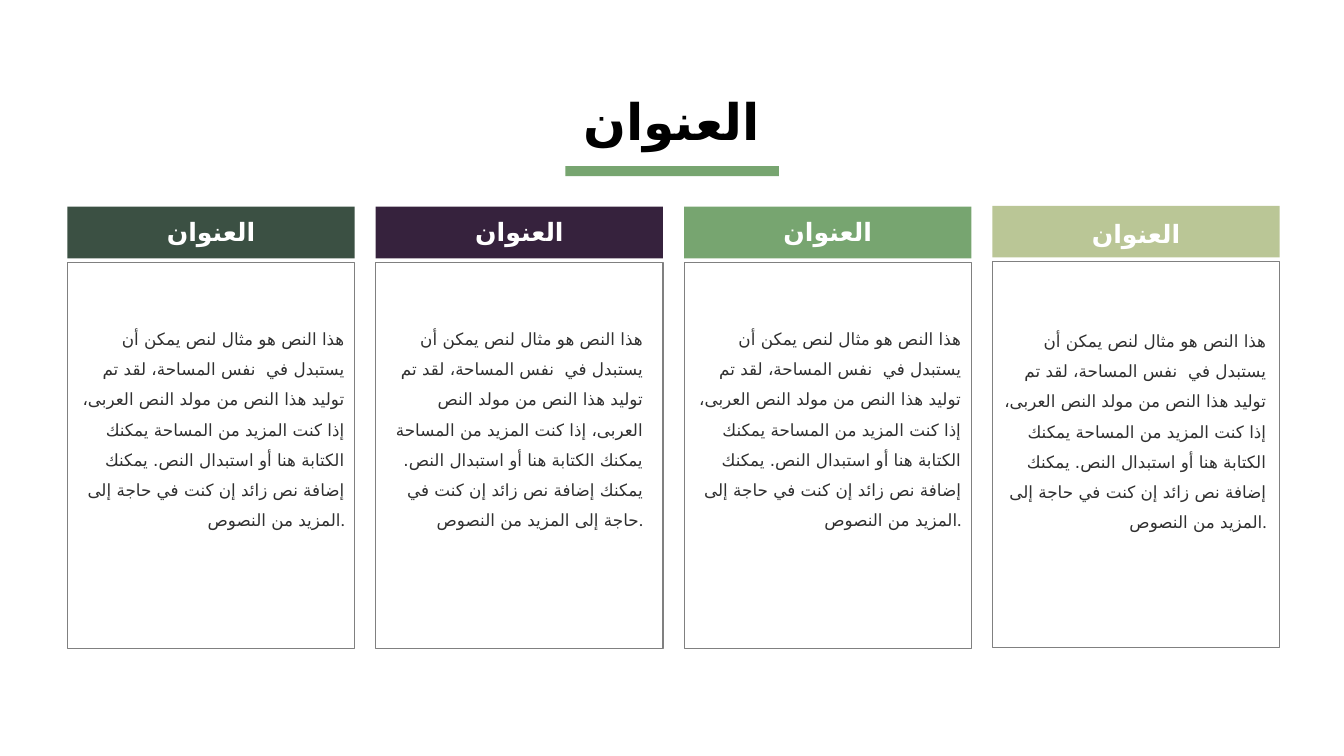
"""Build a slide with an underlined heading above four coloured text columns."""
import dataclasses

import lxml.etree
import pptx
import pptx.dml.color
import pptx.enum.shapes
import pptx.enum.text
import pptx.oxml.ns
import pptx.shapes.autoshape
import pptx.shapes.base
import pptx.util

Cm = pptx.util.Cm
Align = pptx.enum.text.PP_ALIGN
Anchor = pptx.enum.text.MSO_ANCHOR

FONT = "Lato"
ARABIC_FONT = "DejaVu Sans"
HEADING = "العنوان"
BODY = (
    "هذا النص هو مثال لنص يمكن أن يستبدل في  نفس المساحة، لقد تم توليد هذا النص "
    "من مولد النص العربى، إذا كنت المزيد من المساحة يمكنك الكتابة هنا أو استبدال "
    "النص. يمكنك إضافة نص زائد إن كنت في حاجة إلى المزيد من النصوص."
)
GREEN = "77A570"
COLUMN_LEFT, COLUMN_WIDTH, COLUMN_PITCH = 1.7, 7.24, 7.77


@dataclasses.dataclass(frozen=True)
class Box:
    left: float
    top: float
    width: float
    height: float

    def lengths(self) -> tuple[pptx.util.Length, ...]:
        return Cm(self.left), Cm(self.top), Cm(self.width), Cm(self.height)


@dataclasses.dataclass(frozen=True)
class TextStyle:
    size: float
    color: str
    align: Align
    bold: bool = False
    spacing: float = 1.0
    anchor: Anchor = Anchor.TOP


@dataclasses.dataclass(frozen=True)
class Column:
    color: str
    body_width: float = COLUMN_WIDTH
    panel_shift: float = 0.0
    text_shift: float = 0.0


TITLE_STYLE = TextStyle(36, "000000", Align.CENTER, bold=True, anchor=Anchor.BOTTOM)
LABEL_STYLE = TextStyle(18, "FFFFFF", Align.CENTER, bold=True)
BODY_STYLE = TextStyle(12, "303030", Align.RIGHT, spacing=1.5)

COLUMNS = (
    Column("3B5043"),
    Column("36223D", body_width=6.99),
    Column(GREEN),
    Column("BAC696", body_width=7.16, panel_shift=-0.02, text_shift=0.05),
)


def rgb(color: str) -> pptx.dml.color.RGBColor:
    return pptx.dml.color.RGBColor.from_string(color)


def write(shape: pptx.shapes.base.BaseShape, text: str, style: TextStyle) -> None:
    frame = shape.text_frame
    frame.text = text
    frame.word_wrap = True
    frame.auto_size = pptx.enum.text.MSO_AUTO_SIZE.NONE
    frame.vertical_anchor = style.anchor
    paragraph = frame.paragraphs[0]
    paragraph.alignment = style.align
    paragraph.line_spacing = style.spacing
    run = paragraph.runs[0]
    run.font.size = pptx.util.Pt(style.size)
    run.font.bold = style.bold
    run.font.color.rgb = rgb(style.color)
    run.font.name = FONT
    properties = run.font._element
    lxml.etree.SubElement(properties, pptx.oxml.ns.qn("a:cs"), typeface=ARABIC_FONT)


def add_rectangle(shapes, box: Box) -> pptx.shapes.autoshape.Shape:
    rectangle = shapes.add_shape(
        pptx.enum.shapes.MSO_SHAPE.RECTANGLE, *box.lengths()
    )
    rectangle.shadow.inherit = False
    return rectangle


def add_bar(shapes, box: Box, color: str) -> None:
    bar = add_rectangle(shapes, box)
    bar.fill.solid()
    bar.fill.fore_color.rgb = rgb(color)
    bar.line.fill.background()


def add_frame(shapes, box: Box) -> None:
    frame = add_rectangle(shapes, box)
    frame.fill.background()
    frame.line.color.rgb = rgb("808080")
    frame.line.width = pptx.util.Pt(0)


def add_text(shapes, box: Box, text: str, style: TextStyle) -> None:
    write(shapes.add_textbox(*box.lengths()), text, style)


def add_column(slide, index: int, column: Column) -> None:
    left = COLUMN_LEFT + index * COLUMN_PITCH
    panel, text = column.panel_shift, column.text_shift
    shapes = slide.shapes.add_group_shape().shapes
    add_frame(shapes, Box(left, 6.62 + panel, COLUMN_WIDTH, 9.72))
    add_text(shapes, Box(left, 7.9 + text, column.body_width, 5.59), BODY, BODY_STYLE)
    add_bar(shapes, Box(left, 5.21 + panel, COLUMN_WIDTH, 1.3), column.color)
    add_text(shapes, Box(left, 5.33 + text, COLUMN_WIDTH, 1.02), HEADING, LABEL_STYLE)


def main() -> None:
    presentation = pptx.Presentation()
    presentation.slide_width, presentation.slide_height = Cm(33.87), Cm(19.05)
    slide = presentation.slides.add_slide(presentation.slide_layouts[5])

    title = slide.shapes.title
    title.left, title.top, title.width, title.height = Box(7.8, 2.13, 18.26, 1.8).lengths()
    write(title, HEADING, TITLE_STYLE)
    add_bar(slide.shapes, Box(14.25, 4.19, 5.38, 0.25), GREEN)

    for index, column in enumerate(COLUMNS):
        add_column(slide, index, column)

    presentation.save("out.pptx")


if __name__ == "__main__":
    main()
